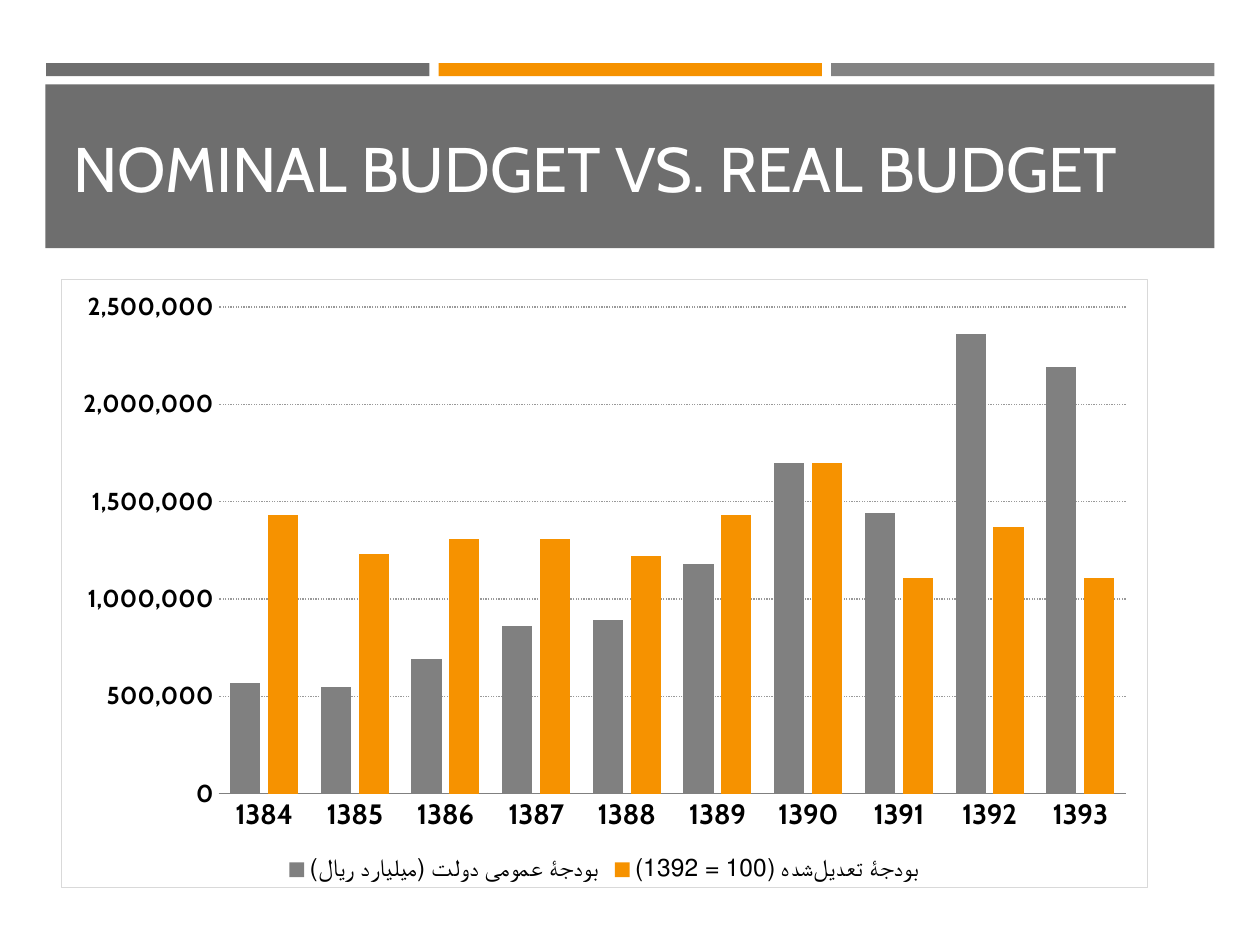
from lxml.etree import SubElement
from pptx import Presentation
from pptx.chart.data import CategoryChartData
from pptx.dml.color import RGBColor
from pptx.enum.chart import XL_CHART_TYPE, XL_LEGEND_POSITION, XL_TICK_MARK
from pptx.enum.dml import MSO_LINE
from pptx.enum.shapes import MSO_SHAPE
from pptx.enum.text import MSO_ANCHOR, MSO_AUTO_SIZE, PP_ALIGN
from pptx.oxml import parse_xml
from pptx.oxml.ns import nsdecls, qn
from pptx.util import Pt

COLORS = {
    "dark": "6E6E6E", "orange": "F69200", "gray": "838383",
    "bar": "808080", "border": "D9D9D9", "grid": "999999",
    "text": "000000", "white": "FFFFFF",
}
FONT = "Cabin"
NON_JOINER = chr(0x200C)
YEARS = [str(year) for year in range(1384, 1394)]
SERIES = [
    ("بودجۀ عمومی دولت (میلیارد ریال)", "bar",
     [570000, 550000, 690000, 860000, 890000,
      1180000, 1700000, 1440000, 2360000, 2190000]),
    (NON_JOINER.join(["بودجۀ تعدیل", "شده (100 = 1392)"]), "orange",
     [1430000, 1230000, 1310000, 1310000, 1220000,
      1430000, 1700000, 1110000, 1370000, 1110000]),
]
PLOT_AREA = {"x": 0.145, "y": 0.046, "w": 0.835, "h": 0.8}


def rgb(name):
    return RGBColor.from_string(COLORS[name])


class SlideBuilder:
    def __init__(self, slide):
        self.slide = slide

    def style_font(self, font, size, color="text", bold=False):
        font.name = FONT
        font.size = Pt(size)
        font.bold = bold
        font.color.rgb = rgb(color)

    def rectangle(self, left, top, width, height, color):
        shape = self.slide.shapes.add_shape(
            MSO_SHAPE.RECTANGLE, Pt(left), Pt(top), Pt(width), Pt(height))
        shape.shadow.inherit = False
        shape.fill.solid()
        shape.fill.fore_color.rgb = rgb(color)
        shape.line.fill.background()

    def title(self, text, left, top, width, height):
        title = self.slide.shapes.title
        title.left, title.top = Pt(left), Pt(top)
        title.width, title.height = Pt(width), Pt(height)
        title.element.getparent().append(title.element)
        frame = title.text_frame
        frame.word_wrap = True
        frame.auto_size = MSO_AUTO_SIZE.NONE
        frame.vertical_anchor = MSO_ANCHOR.MIDDLE
        paragraph = frame.paragraphs[0]
        paragraph.alignment = PP_ALIGN.LEFT
        run = paragraph.add_run()
        run.text = text
        self.style_font(run.font, 36, "white")

    def column_chart(self, left, top, width, height):
        data = CategoryChartData(number_format="#,##0")
        data.categories = YEARS
        for name, _, values in SERIES:
            data.add_series(name, values)
        chart = self.slide.shapes.add_chart(
            XL_CHART_TYPE.COLUMN_CLUSTERED,
            Pt(left), Pt(top), Pt(width), Pt(height), data).chart
        chart.has_title = False
        self.style_font(chart.font, 10)

        plot = chart.plots[0]
        plot.gap_width = 75
        plot.overlap = -25
        plot.vary_by_categories = False
        for series, (_, color, _) in zip(plot.series, SERIES):
            series.format.fill.solid()
            series.format.fill.fore_color.rgb = rgb(color)

        self.axes(chart)
        chart.has_legend = True
        chart.legend.position = XL_LEGEND_POSITION.BOTTOM
        chart.legend.include_in_layout = False
        self.style_font(chart.legend.font, 14)
        self.chart_frame(chart)

    def axes(self, chart):
        for axis, size in ((chart.category_axis, 16), (chart.value_axis, 14)):
            axis.major_tick_mark = XL_TICK_MARK.NONE
            axis.minor_tick_mark = XL_TICK_MARK.NONE
            self.style_font(axis.tick_labels.font, size, bold=True)
        chart.category_axis.format.line.color.rgb = rgb("bar")
        chart.category_axis.format.line.width = Pt(0.75)

        value_axis = chart.value_axis
        value_axis.minimum_scale = 0
        value_axis.maximum_scale = 2500000
        value_axis.major_unit = 500000
        value_axis.tick_labels.number_format = "#,##0"
        value_axis.tick_labels.number_format_is_linked = False
        value_axis.format.line.fill.background()
        grid_line = value_axis.major_gridlines.format.line
        grid_line.color.rgb = rgb("grid")
        grid_line.width = Pt(0.75)
        grid_line.dash_style = MSO_LINE.ROUND_DOT

    def chart_frame(self, chart):
        chart_element = chart.element.find(qn("c:chart"))
        chart_element.addnext(parse_xml(
            f'<c:spPr {nsdecls("c", "a")}>'
            f'<a:solidFill><a:srgbClr val="{COLORS["white"]}"/></a:solidFill>'
            f'<a:ln w="{Pt(0.75)}"><a:solidFill>'
            f'<a:srgbClr val="{COLORS["border"]}"/></a:solidFill></a:ln>'
            '</c:spPr>'))
        plot_area = chart_element.find(qn("c:plotArea"))
        layout = plot_area.find(qn("c:layout"))
        if layout is None:
            layout = parse_xml(f'<c:layout {nsdecls("c")}/>')
            plot_area.insert(0, layout)
        manual = SubElement(layout, qn("c:manualLayout"))
        settings = {"layoutTarget": "inner", "xMode": "edge", "yMode": "edge"}
        for tag, value in (settings | PLOT_AREA).items():
            SubElement(manual, qn(f"c:{tag}")).set("val", str(value))


def main():
    presentation = Presentation()
    presentation.slide_width = Pt(720)
    presentation.slide_height = Pt(540)
    builder = SlideBuilder(
        presentation.slides.add_slide(presentation.slide_layouts[5]))
    for index, color in enumerate(("dark", "orange", "gray")):
        builder.rectangle(26.4 + index * 224.3, 36, 219, 7.5, color)
    builder.rectangle(26, 48.3, 668, 93.5, "dark")
    builder.title("NOMINAL BUDGET VS. REAL BUDGET", 34.6, 55.4, 652, 80)
    builder.column_chart(34.6, 159.2, 621.4, 348.2)
    presentation.save("out.pptx")


if __name__ == "__main__":
    main()
